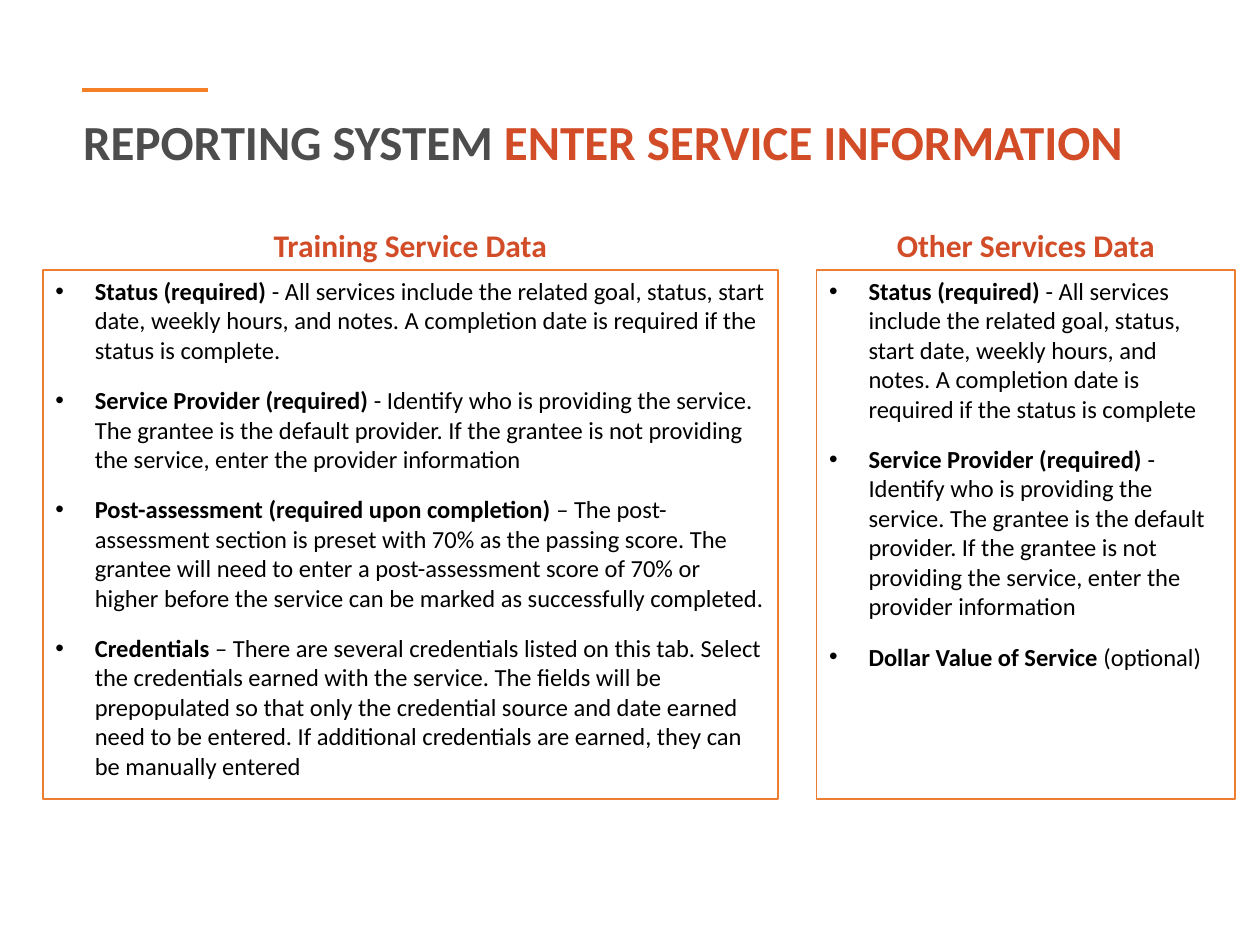
from dataclasses import dataclass

from lxml.etree import SubElement
from pptx import Presentation
from pptx.dml.color import RGBColor
from pptx.enum.shapes import MSO_CONNECTOR
from pptx.enum.text import MSO_ANCHOR as Anchor, MSO_AUTO_SIZE as AutoSize, PP_ALIGN as Align
from pptx.oxml.ns import qn
from pptx.util import Pt

FONT = "Calibri"
GREY, RUST, BLACK, WHITE = "4D4D4D", "D14C27", "000000", "FFFFFF"
ACCENT, BORDER = "F58025", "ED7D31"
HEADING_TOP, HEADING_HEIGHT = 125.3, 28.8
BOX_TOP, BOX_HEIGHT = 154.1, 302.4
INDENT = 22.5


@dataclass
class Column:
    """A heading over a bordered list of (bold term, description) items."""
    heading: str
    left: float
    width: float
    heading_index: int
    body_index: int
    items: list[tuple[str, str]]


STATUS = ("- All services include the related goal, status, start date, weekly hours, "
          "and notes. A completion date is required if the status is complete")
PROVIDER = ("- Identify who is providing the service. The grantee is the default provider. "
            "If the grantee is not providing the service, enter the provider information")

COLUMNS = [
    Column("Training Service Data", 24.5, 420, 1, 2, [
        ("Status (required) ", STATUS + "."),
        ("Service Provider (required) ", PROVIDER),
        ("Post-assessment (required upon completion)",
         " – The post-assessment section is preset with 70% as the passing score. "
         "The grantee will need to enter a post-assessment score of 70% or higher "
         "before the service can be marked as successfully completed."),
        ("Credentials ",
         "– There are several credentials listed on this tab. Select the credentials "
         "earned with the service. The fields will be prepopulated so that only the "
         "credential source and date earned need to be entered. If additional "
         "credentials are earned, they can be manually entered"),
    ]),
    Column("Other Services Data", 466.6, 239.2, 3, 4, [
        ("Status (required) ", STATUS),
        ("Service Provider (required) ", PROVIDER),
        ("Dollar Value of Service", " (optional)"),
    ]),
]


def color(value: str) -> RGBColor:
    return RGBColor.from_string(value)


def add_text(paragraph, text: str, *, size: float, fill: str = BLACK, bold: bool = False) -> None:
    run = paragraph.add_run()
    run.text = text
    run.font.name, run.font.size, run.font.bold = FONT, Pt(size), bold
    run.font.color.rgb = color(fill)


def format_paragraph(paragraph, *, align=Align.LEFT, after: float = 0, spacing: float = 1.0) -> None:
    paragraph.alignment = align
    paragraph.space_before, paragraph.space_after = Pt(0), Pt(after)
    paragraph.line_spacing = spacing


def add_bullet(paragraph) -> None:
    properties = paragraph._p.get_or_add_pPr()
    properties.set("marL", str(Pt(INDENT)))
    properties.set("indent", str(-Pt(INDENT)))
    SubElement(properties, qn("a:buFont")).set("typeface", "Arial")
    SubElement(properties, qn("a:buChar")).set("char", "•")


def place(shape, left: float, top: float, width: float, height: float):
    """Position a placeholder and return its top-anchored text frame."""
    shape.left, shape.top = Pt(left), Pt(top)
    shape.width, shape.height = Pt(width), Pt(height)
    frame = shape.text_frame
    frame.word_wrap, frame.auto_size = True, AutoSize.NONE
    frame.vertical_anchor = Anchor.TOP
    frame.margin_left = frame.margin_right = Pt(7.2)
    frame.margin_top = frame.margin_bottom = Pt(3.6)
    return frame


def draw_column(slide, column: Column) -> None:
    holders = {holder.placeholder_format.idx: holder for holder in slide.placeholders}

    # Heading
    frame = place(holders[column.heading_index], column.left, HEADING_TOP,
                  column.width, HEADING_HEIGHT)
    format_paragraph(frame.paragraphs[0], align=Align.CENTER)
    add_text(frame.paragraphs[0], column.heading, size=18, fill=RUST, bold=True)

    # Bordered list
    box = holders[column.body_index]
    frame = place(box, column.left, BOX_TOP, column.width, BOX_HEIGHT)
    box.fill.solid()
    box.fill.fore_color.rgb = color(WHITE)
    box.line.color.rgb = color(BORDER)
    box.line.width = Pt(1)
    for number, (term, description) in enumerate(column.items):
        paragraph = frame.add_paragraph() if number else frame.paragraphs[0]
        add_bullet(paragraph)
        format_paragraph(paragraph, after=12)
        add_text(paragraph, term, size=14, bold=True)
        add_text(paragraph, description, size=14)


def main() -> None:
    presentation = Presentation()
    presentation.slide_width, presentation.slide_height = Pt(720), Pt(540)
    comparison_layout = presentation.slide_layouts[4]
    slide = presentation.slides.add_slide(comparison_layout)

    # Accent rule above the title
    rule = slide.shapes.add_connector(MSO_CONNECTOR.STRAIGHT, Pt(46.8), Pt(51.6), Pt(118.8), Pt(51.6))
    rule.line.color.rgb = color(ACCENT)
    rule.line.width = Pt(2.25)
    SubElement(rule._element.spPr, qn("a:effectLst"))

    # Title
    title = place(slide.shapes.title, 40.3, 64.1, 632.2, 58).paragraphs[0]
    format_paragraph(title, spacing=0.9)
    add_text(title, "REPORTING SYSTEM ", size=28, fill=GREY, bold=True)
    add_text(title, "ENTER SERVICE INFORMATION", size=28, fill=RUST, bold=True)

    # Columns
    for column in COLUMNS:
        draw_column(slide, column)

    presentation.save("out.pptx")


if __name__ == "__main__":
    main()
